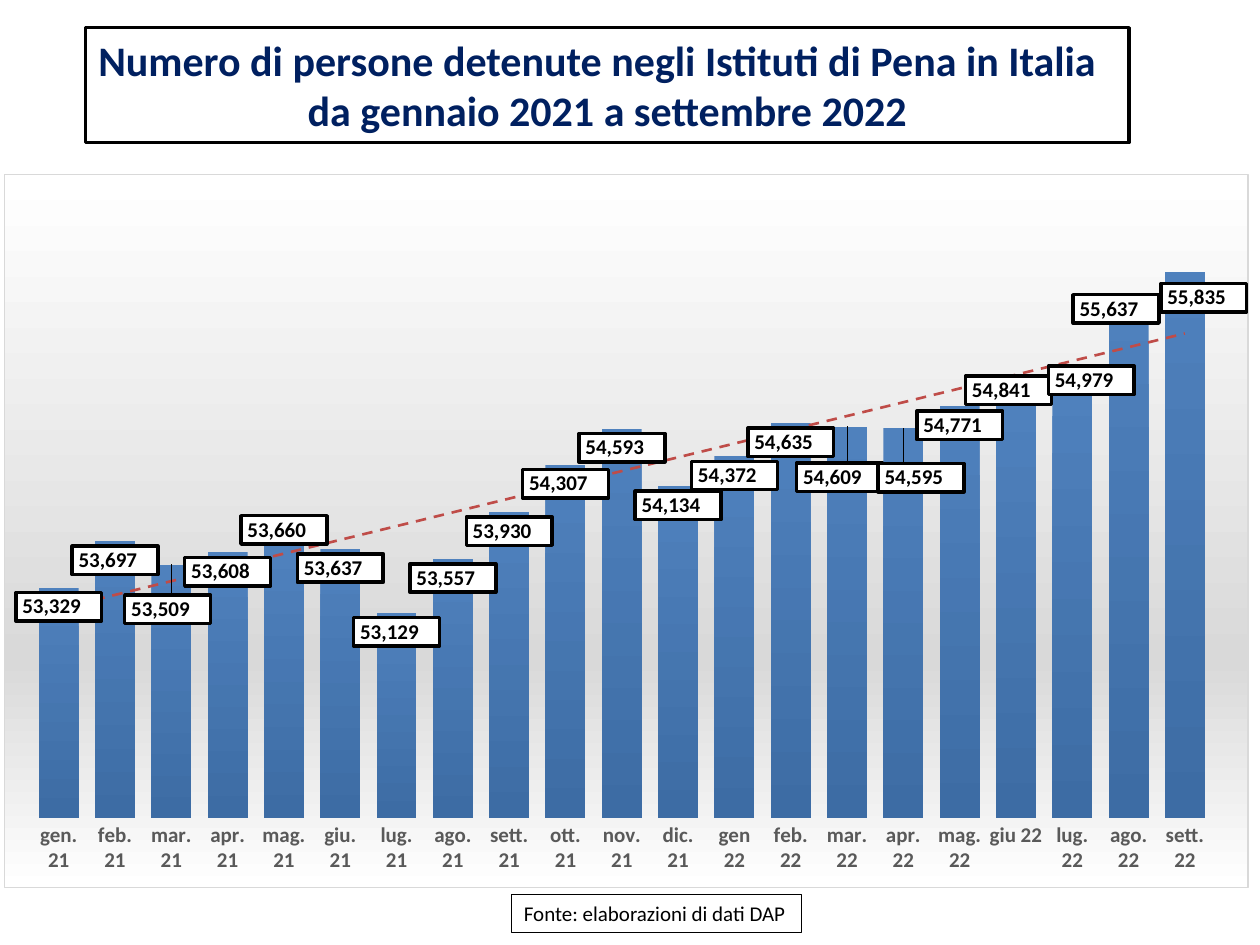
"""Build a slide charting the monthly number of people held in Italian prisons."""
from copy import deepcopy
from dataclasses import dataclass

from pptx import Presentation
from pptx import util as u
from pptx.chart.data import CategoryChartData
from pptx.dml.color import RGBColor
from pptx.enum import chart as ch, shapes, text
from pptx.oxml import parse_xml
from pptx.oxml.ns import qn

NS = ('xmlns:c="http://schemas.openxmlformats.org/drawingml/2006/chart" '
      'xmlns:a="http://schemas.openxmlformats.org/drawingml/2006/main"')
MONTHS = ("gen. 21,feb. 21,mar. 21,apr. 21,mag. 21,giu. 21,lug. 21,ago. 21,sett. 21,"
          "ott. 21,nov. 21,dic. 21,gen 22,feb. 22,mar. 22,apr. 22,mag. 22,giu 22,"
          "lug. 22,ago. 22,sett. 22").split(",")
DETAINEES = [53329, 53697, 53509, 53608, 53660, 53637, 53129, 53557, 53930, 54307, 54593,
             54134, 54372, 54635, 54609, 54595, 54771, 54841, 54979, 55637, 55835]
LABEL_SHIFTS = {2: (-0.03, 0.2), 4: (0, -0.28), 14: (-0.06, 0.25), 15: (0.14, 0.24),
                17: (-0.06, -0.21), 18: (0.15, -0.15), 19: (-0.1, -0.06), 20: (0.15, 0.05)}


@dataclass(frozen=True)
class Theme:
    """Colours, font and type sizes of the slide."""
    font: str = "Calibri"
    ink: str = "000000"
    navy: str = "002060"
    paper: str = "FFFFFF"
    axis: str = "595959"
    silver: str = "D9D9D9"
    bar_top: str = "4F81BD"
    bar_foot: str = "3D6CA4"
    trend: str = "BF4C48"
    title_size: int = 24
    label_size: int = 12
    chart_size: int = 11
    number_format: str = r'_-* #,##0\ _€_-;\-* #,##0\ _€_-;_-* "-"?'


def solid(colour):
    """Return the XML of a solid fill."""
    return f'<a:solidFill><a:srgbClr val="{colour}"/></a:solidFill>'


def outline(colour, points, dash="solid"):
    """Return the XML of a line."""
    return f'<a:ln w="{u.Pt(points)}">{solid(colour)}<a:prstDash val="{dash}"/></a:ln>'


def manual_layout(x, y, size=""):
    """Return a chart layout element placed by fractions of the chart."""
    return parse_xml(f'<c:layout {NS}><c:manualLayout>{size and size[0]}'
                     f'<c:x val="{x:.4f}"/><c:y val="{y:.4f}"/>{size and size[1]}'
                     '</c:manualLayout></c:layout>')


class DetaineeSlide:
    """Hold the style and the current slide."""

    def __init__(self, deck, theme):
        self.theme = theme
        self.slide = deck.slides.add_slide(deck.slide_layouts[5])

    def style(self, font, size, colour, bold=False):
        """Apply the theme font with a size, colour and weight."""
        font.name, font.size, font.bold = self.theme.font, u.Pt(size), bold
        font.color.rgb = RGBColor.from_string(colour)

    def frame(self, box, lines, line_width, size, colour, bold=False):
        """Fill a box with lines of text inside a black border."""
        box.fill.solid()
        box.fill.fore_color.rgb = RGBColor.from_string(self.theme.paper)
        box.line.color.rgb = RGBColor.from_string(self.theme.ink)
        box.line.width = u.Pt(line_width)
        body = box.text_frame
        body.text = "\n".join(lines)
        body.word_wrap = False
        body.auto_size = text.MSO_AUTO_SIZE.SHAPE_TO_FIT_TEXT
        body.vertical_anchor = text.MSO_ANCHOR.TOP
        for number, paragraph in enumerate(body.paragraphs):
            paragraph.alignment = text.PP_ALIGN.CENTER if number else text.PP_ALIGN.LEFT
            self.style(paragraph.font, size, colour, bold)

    def title(self, lines, left, top, width, height):
        """Place the framed title."""
        heading = self.slide.shapes.title
        heading.left, heading.top = u.Inches(left), u.Inches(top)
        heading.width, heading.height = u.Inches(width), u.Inches(height)
        self.frame(heading, lines, 2, self.theme.title_size, self.theme.navy, True)

    def source(self, line, left, top, width, height):
        """Place the framed source note."""
        note = self.slide.shapes.add_shape(
            shapes.MSO_SHAPE.RECTANGLE, *map(u.Inches, (left, top, width, height)))
        note.shadow.inherit = False
        self.frame(note, [line], 0.75, self.theme.label_size, self.theme.ink)

    def columns(self, left, top, width, height):
        """Add the column chart with labels and a trend line."""
        data = CategoryChartData(number_format="#,##0")
        data.categories = MONTHS
        data.add_series("Series 1", DETAINEES)
        chart = self.slide.shapes.add_chart(
            ch.XL_CHART_TYPE.COLUMN_CLUSTERED,
            *map(u.Inches, (left, top, width, height)), data).chart
        chart.has_legend = chart.has_title = False
        self.style(chart.font, self.theme.chart_size, self.theme.ink)
        self.axes(chart)
        self.backdrop(chart)
        plot = chart.plots[0]
        plot.gap_width, plot.vary_by_categories = 41, False
        detainees = plot.series[0]
        fill = detainees.format.fill
        fill.gradient()
        fill.gradient_angle = 270
        for stop, colour in zip(fill.gradient_stops, (self.theme.bar_top, self.theme.bar_foot)):
            stop.color.rgb = RGBColor.from_string(colour)
        for stop, position in zip(fill.gradient_stops, (0, 1)):
            stop.position = position
        self.labels(detainees, width, height)
        self.trend(detainees)

    def axes(self, chart):
        """Style the month axis and hide the value axis."""
        months, count = chart.category_axis, chart.value_axis
        months.major_tick_mark = ch.XL_TICK_MARK.NONE
        months.format.line.fill.background()
        self.style(months.tick_labels.font, self.theme.label_size, self.theme.axis, True)
        count.minimum_scale, count.maximum_scale = 51500, 56500
        count.has_major_gridlines = count.visible = False
        count.tick_labels.number_format = self.theme.number_format
        count.tick_labels.number_format_is_linked = False

    def backdrop(self, chart):
        """Give the chart area its gradient and border, and place the plot."""
        paper, silver = self.theme.paper, self.theme.silver
        stops = "".join(f'<a:gs pos="{position}000"><a:srgbClr val="{colour}"/></a:gs>'
                        for position, colour in ((0, paper), (68, silver), (100, paper)))
        area = chart.element.find(qn("c:chart"))
        area.addnext(parse_xml(
            f'<c:spPr {NS}><a:gradFill><a:gsLst>{stops}</a:gsLst><a:lin ang="5400000"/>'
            f'</a:gradFill>{outline(silver, 0.75)}</c:spPr>'))
        plot_area = area.find(qn("c:plotArea"))
        for automatic in plot_area.findall(qn("c:layout")):
            plot_area.remove(automatic)
        plot_area.insert(0, manual_layout(0.021, 0.02, (
            '<c:layoutTarget val="inner"/><c:xMode val="edge"/><c:yMode val="edge"/>',
            '<c:w val="0.951"/><c:h val="0.882"/>')))

    def labels(self, detainees, width, height):
        """Show boxed values and shift the crowded ones."""
        values = detainees.data_labels
        values.show_value = True
        values.number_format = self.theme.number_format
        values.number_format_is_linked = False
        values.position = ch.XL_LABEL_POSITION.INSIDE_END
        self.style(values.font, self.theme.label_size, self.theme.ink, True)
        shared = detainees.data_labels._element
        shared.find(qn("c:numFmt")).addnext(parse_xml(
            f'<c:spPr {NS}>{solid(self.theme.paper)}{outline(self.theme.ink, 2)}</c:spPr>'))
        kept = ("numFmt", "spPr", "txPr", "dLblPos", "showLegendKey", "showVal",
                "showCatName", "showSerName", "showPercent", "showBubbleSize")
        parts = [part for part in (shared.find(qn(f"c:{tag}")) for tag in kept)
                 if part is not None]
        for place, (month, (right, down)) in enumerate(LABEL_SHIFTS.items()):
            label = parse_xml(f'<c:dLbl {NS}><c:idx val="{month}"/></c:dLbl>')
            label.append(manual_layout(right / width, down / height))
            label.extend(deepcopy(parts))
            shared.insert(place, label)

    def trend(self, detainees):
        """Add the dashed linear trend line."""
        detainees._element.find(qn("c:cat")).addprevious(parse_xml(
            f'<c:trendline {NS}><c:spPr>{outline(self.theme.trend, 1.5, "dash")}</c:spPr>'
            '<c:trendlineType val="linear"/><c:dispRSqr val="0"/><c:dispEq val="0"/>'
            '</c:trendline>'))


def main():
    """Build and save the deck."""
    deck = Presentation()
    deck.slide_width, deck.slide_height = u.Inches(10), u.Inches(7.5)
    page = DetaineeSlide(deck, Theme())
    page.title(["Numero di persone detenute negli Istituti di Pena in Italia",
                "da gennaio 2021 a settembre 2022"], 0.68, 0.22, 8.28, 0.91)
    page.source("Fonte: elaborazioni di dati DAP", 4.06, 7.1, 2.3, 0.3)
    page.columns(0.03, 1.38, 9.88, 5.67)
    deck.save("out.pptx")


if __name__ == "__main__":
    main()
